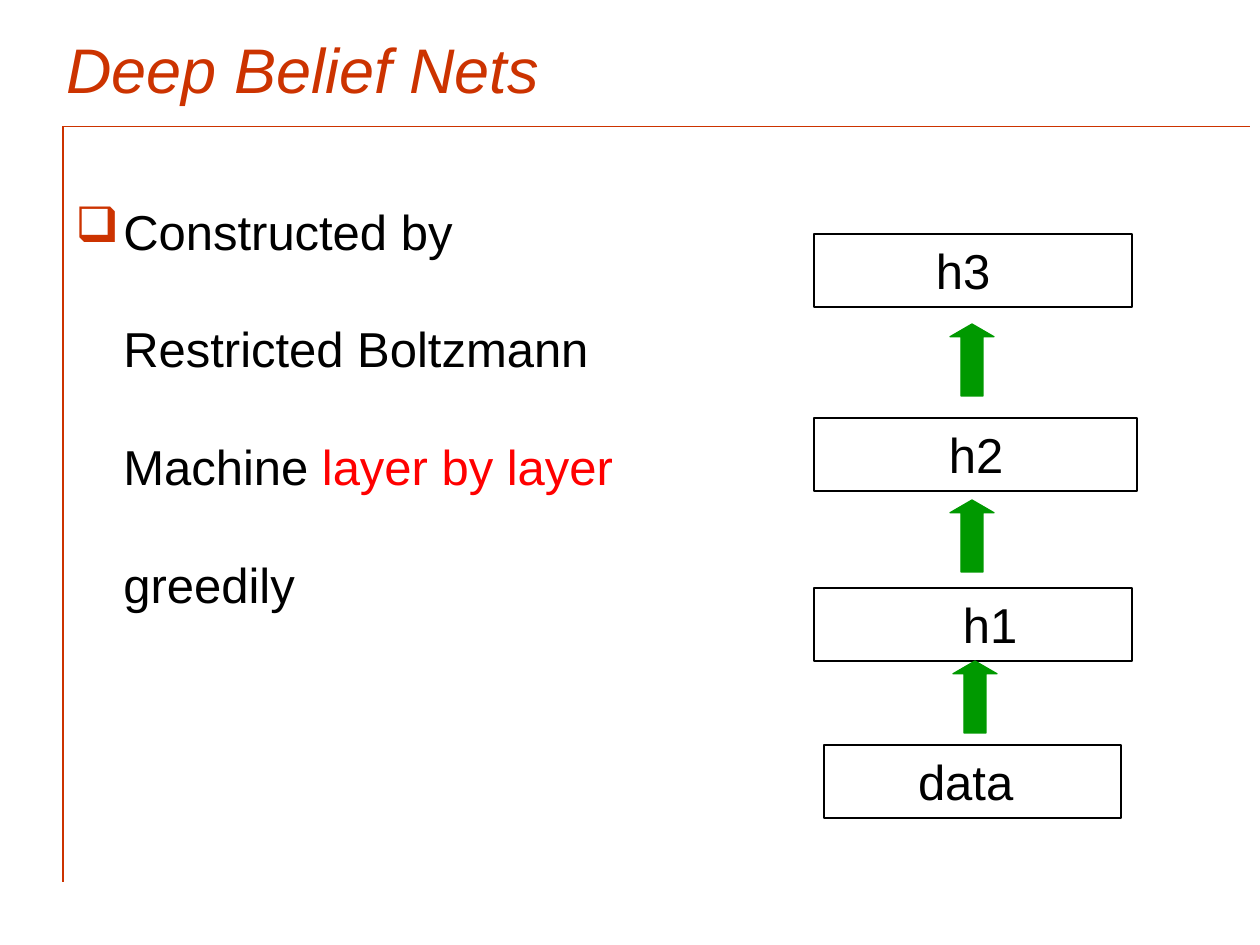
from lxml import etree
from pptx import Presentation
from pptx.dml.color import RGBColor
from pptx.enum.shapes import MSO_CONNECTOR, MSO_SHAPE
from pptx.enum.text import MSO_ANCHOR, PP_ALIGN
from pptx.oxml.ns import qn
from pptx.util import Emu, Pt

STRAIGHT = MSO_CONNECTOR.STRAIGHT
RECTANGLE = MSO_SHAPE.RECTANGLE
UP_ARROW = MSO_SHAPE.UP_ARROW
MIDDLE, TOP = MSO_ANCHOR.MIDDLE, MSO_ANCHOR.TOP
LEFT = PP_ALIGN.LEFT

ORANGE = RGBColor(0xCC, 0x33, 0x00)
GREEN = RGBColor(0x00, 0x99, 0x00)
RED = RGBColor(0xFF, 0x00, 0x00)
BLACK = RGBColor(0x00, 0x00, 0x00)

FONT = "Arial"
PX_PER_INCH = 126


def px(length):
    return Emu(round(length * 914400 / PX_PER_INCH))


def add_span(para, text, size=28, color=BLACK, italic=False):
    span = para.add_run()
    span.text = text
    span.font.name = FONT
    span.font.size = Pt(size)
    span.font.italic = italic
    span.font.color.rgb = color


def add_text_box(page, left, top, width, height, anchor=TOP):
    box = page.shapes.add_textbox(px(left), px(top), px(width), px(height))
    box.text_frame.word_wrap = True
    box.text_frame.vertical_anchor = anchor
    return box.text_frame.paragraphs[0]


def add_bullet(para, char, color, indent):
    props = para._p.get_or_add_pPr()
    props.set("marL", str(px(indent)))
    props.set("indent", str(-px(indent)))
    bullet_color = etree.SubElement(props, qn("a:buClr"))
    etree.SubElement(bullet_color, qn("a:srgbClr"), val=str(color))
    etree.SubElement(props, qn("a:buChar"), char=char)


def add_rule(page, start, end, weight):
    rule = page.shapes.add_connector(STRAIGHT, *map(px, start + end))
    rule.line.color.rgb = ORANGE
    rule.line.width = Pt(weight)
    etree.SubElement(rule._element.spPr, qn("a:effectLst"))


def add_frame(page, left, top, right, bottom):
    add_rule(page, (left, top), (right, top), 0.25)
    add_rule(page, (left, top), (left, bottom), 0.75)


def add_title(page, left, top, width, height):
    para = add_text_box(page, left, top, width, height, MIDDLE)
    add_span(para, "Deep Belief Nets", size=36, color=ORANGE, italic=True)


def add_body(page, left, top, width, height):
    para = add_text_box(page, left, top, width, height)
    add_bullet(para, "❑", ORANGE, 48)
    para.line_spacing = 2.0
    add_span(para, "Constructed by Restricted Boltzmann Machine ")
    add_span(para, "layer by layer ", color=RED)
    add_span(para, "greedily")


def add_outlined(page, kind, left, top, width, height, color):
    shape = page.shapes.add_shape(kind, px(left), px(top), px(width), px(height))
    shape.shadow.inherit = False
    shape.line.color.rgb = color
    shape.line.width = Pt(0.75)
    return shape


def add_layer(page, text, left, top, width, text_left):
    layer = add_outlined(page, RECTANGLE, left, top, width, 73, BLACK)
    layer.fill.background()
    frame = layer.text_frame
    frame.word_wrap = True
    frame.vertical_anchor = TOP
    frame.margin_left = px(text_left)
    para = frame.paragraphs[0]
    para.alignment = LEFT
    add_span(para, text)


def add_arrow(page, left, top):
    arrow = add_outlined(page, UP_ARROW, left, top, 44, 72, GREEN)
    arrow.fill.solid()
    arrow.fill.fore_color.rgb = GREEN
    arrow.adjustments[0] = 0.5
    arrow.adjustments[1] = 0.29


def add_network(page, left, top):
    # Layers: label, offset from the corner, width, inset of the label
    for text, dx, dy, width, text_left in (
        ("h3", 0, 0, 318, 122),
        ("h2", 0, 184, 323, 135),
        ("h1", 0, 354, 318, 149),
        ("data", 10, 511, 297, 94),
    ):
        add_layer(page, text, left + dx, top + dy, width, text_left)
    # Upward arrows between layers
    for dx, dy in ((136, 90), (136, 266), (139, 427)):
        add_arrow(page, left + dx, top + dy)


def main():
    deck = Presentation()
    deck.slide_width, deck.slide_height = px(1260), px(945)
    page = deck.slides.add_slide(deck.slide_layouts[6])
    add_frame(page, 63, 126, 1250, 882)
    add_title(page, 54, 5, 1135, 126)
    add_body(page, 63, 136, 616, 746)
    add_network(page, 814, 234)
    deck.save("out.pptx")


if __name__ == "__main__":
    main()
